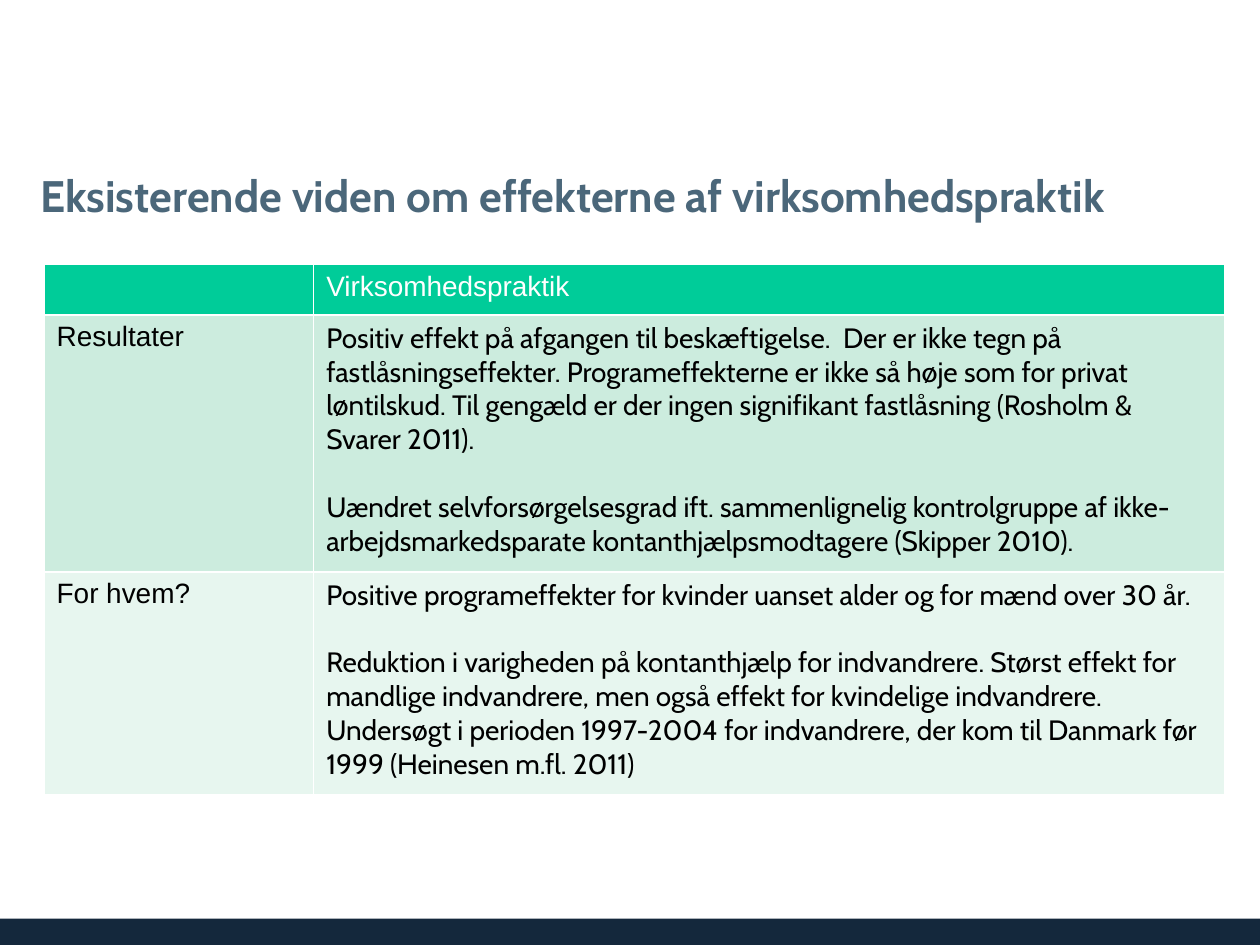
from dataclasses import dataclass

from lxml.etree import SubElement
from pptx import Presentation
from pptx.dml.color import RGBColor
from pptx.enum.shapes import MSO_SHAPE
from pptx.enum.text import MSO_ANCHOR, MSO_AUTO_SIZE, PP_ALIGN
from pptx.oxml.ns import qn
from pptx.util import Inches, Pt

NAVY, SLATE, WHITE, BLACK = "14283C", "4B677A", "FFFFFF", "000000"
GREEN, LIGHT_GREEN, PALE_GREEN = "00CC99", "CCECDE", "E7F6EF"
LABEL_FONT, BODY_FONT = "Arial", "Cabin"


@dataclass
class Row:
    label: str
    paragraphs: list[str]
    height: float
    fill: str
    color: str = BLACK
    font: str = BODY_FONT


ROWS = [
    Row("", ["Virksomhedspraktik"], 0.4, GREEN, WHITE, LABEL_FONT),
    Row("Resultater", [
        "Positiv effekt på afgangen til beskæftigelse.  Der er ikke tegn på "
        "fastlåsningseffekter. Programeffekterne er ikke så høje som for privat "
        "løntilskud. Til gengæld er der ingen signifikant fastlåsning "
        "(Rosholm & Svarer 2011).",
        "Uændret selvforsørgelsesgrad ift. sammenlignelig kontrolgruppe af "
        "ikke-arbejdsmarkedsparate kontanthjælpsmodtagere (Skipper 2010).",
    ], 2.04, LIGHT_GREEN),
    Row("For hvem?", [
        "Positive programeffekter for kvinder uanset alder og for mænd over 30 år.",
        "Reduktion i varigheden på kontanthjælp for indvandrere. Størst effekt for "
        "mandlige indvandrere, men også effekt for kvindelige indvandrere. "
        "Undersøgt i perioden 1997-2004 for indvandrere, der kom til Danmark før "
        "1999 (Heinesen m.fl. 2011)",
    ], 1.77, PALE_GREEN),
]
COLUMN_WIDTHS = [2.14, 7.23]


def rgb(color: str) -> RGBColor:
    return RGBColor.from_string(color)


def style_font(font, name: str, size: float, color: str, bold: bool = False) -> None:
    font.name, font.size, font.bold = name, Pt(size), bold
    font.color.rgb = rgb(color)


def add_borders(cell, color: str, width: float) -> None:
    properties = cell._tc.get_or_add_tcPr()
    for side in ("lnL", "lnR", "lnT", "lnB"):
        line = SubElement(properties, qn(f"a:{side}"), w=str(Pt(width)))
        SubElement(SubElement(line, qn("a:solidFill")), qn("a:srgbClr"), val=color)


def fill_cell(cell, paragraphs: list[str], font: str, row: Row) -> None:
    add_borders(cell, WHITE, 1)  # borders come before the fill in the cell XML
    cell.fill.solid()
    cell.fill.fore_color.rgb = rgb(row.fill)
    frame = cell.text_frame
    for index, text in enumerate(paragraphs):
        paragraph = frame.add_paragraph() if index else frame.paragraphs[0]
        paragraph.text = text
        style_font(paragraph.font, font, 16, row.color)
        if index:
            paragraph.space_before = Pt(19.4)


def add_title(slide, text: str) -> None:
    title = slide.shapes.title
    title.left, title.top = Inches(0.28), Inches(1.17)
    title.width, title.height = Inches(9.45), Inches(0.75)
    frame = title.text_frame
    frame.auto_size = MSO_AUTO_SIZE.NONE
    frame.word_wrap = True
    frame.vertical_anchor = MSO_ANCHOR.MIDDLE
    frame.margin_left, frame.margin_right = Inches(0.04), Inches(0.08)
    frame.margin_top = frame.margin_bottom = Inches(0.05)
    paragraph = frame.paragraphs[0]
    paragraph.text = text
    paragraph.alignment = PP_ALIGN.LEFT
    style_font(paragraph.font, BODY_FONT, 25.2, SLATE, bold=True)


def add_findings_table(slide, rows: list[Row]) -> None:
    table = slide.shapes.add_table(
        len(rows), len(COLUMN_WIDTHS), Inches(0.35), Inches(2.1),
        Inches(sum(COLUMN_WIDTHS)), Inches(sum(row.height for row in rows)),
    ).table
    for column, width in zip(table.columns, COLUMN_WIDTHS):
        column.width = Inches(width)
    for index, row in enumerate(rows):
        table.rows[index].height = Inches(row.height)
        fill_cell(table.cell(index, 0), [row.label], LABEL_FONT, row)
        fill_cell(table.cell(index, 1), row.paragraphs, row.font, row)


def add_footer_bar(slide) -> None:
    bar = slide.shapes.add_shape(
        MSO_SHAPE.RECTANGLE, 0, Inches(7.29), Inches(10), Inches(0.21))
    bar.shadow.inherit = False
    bar.fill.solid()
    bar.fill.fore_color.rgb = rgb(NAVY)
    bar.line.fill.background()


def main() -> None:
    presentation = Presentation()
    presentation.slide_width, presentation.slide_height = Inches(10), Inches(7.5)
    # Title Only layout
    slide = presentation.slides.add_slide(presentation.slide_layouts[5])
    add_footer_bar(slide)
    add_title(slide, "Eksisterende viden om effekterne af virksomhedspraktik")
    add_findings_table(slide, ROWS)
    presentation.save("out.pptx")


if __name__ == "__main__":
    main()
